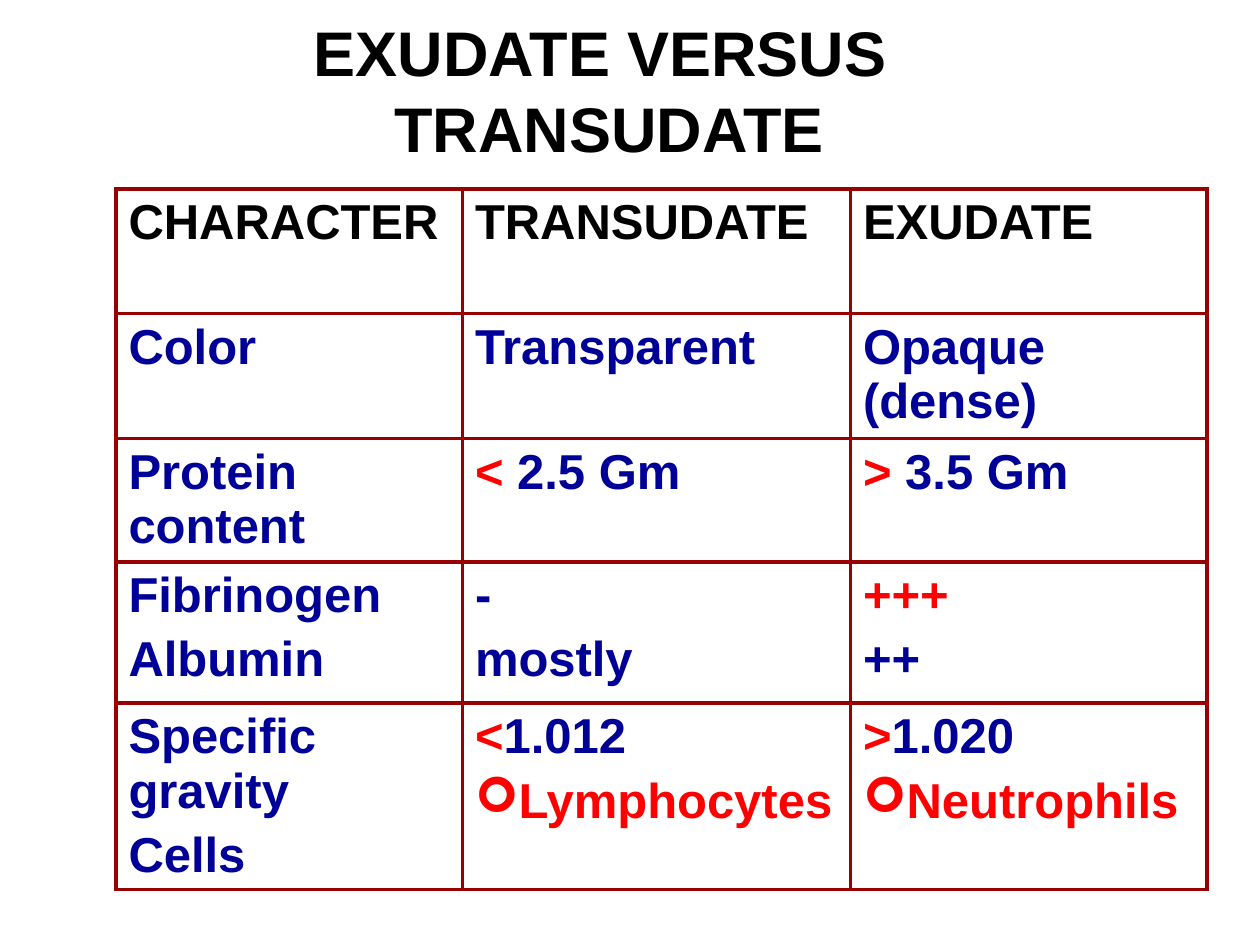
from typing import NamedTuple

from lxml.etree import SubElement
from pptx import Presentation
from pptx.dml.color import RGBColor
from pptx.enum.text import MSO_ANCHOR, MSO_AUTO_SIZE, PP_ALIGN
from pptx.oxml.ns import qn
from pptx.util import Inches, Pt

BLACK = RGBColor(0x00, 0x00, 0x00)
NAVY = RGBColor(0x00, 0x00, 0x99)
RED = RGBColor(0xFF, 0x00, 0x00)
MAROON = RGBColor(0x99, 0x00, 0x00)

COLUMN_WIDTHS = (2.75, 3.08, 2.83)
ROW_HEIGHTS = (0.99, 0.99, 0.98, 1.12, 1.26)
BORDER_WIDTH = Pt(2.25)


class Span(NamedTuple):
    text: str
    color: RGBColor = NAVY


class Line(NamedTuple):
    spans: tuple[Span, ...]
    bullet: str = ""


def plain(text: str, color: RGBColor = NAVY, bullet: str = "") -> Line:
    return Line((Span(text, color),), bullet)


def compared(sign: str, value: str) -> Line:
    return Line((Span(sign, RED), Span(value)))


COMPARISON = (
    tuple((plain(heading, BLACK),) for heading in ("CHARACTER", "TRANSUDATE", "EXUDATE")),
    tuple((plain(entry),) for entry in ("Color", "Transparent", "Opaque (dense)")),
    ((plain("Protein content"),), (compared("<", " 2.5 Gm"),), (compared(">", " 3.5 Gm"),)),
    (
        (plain("Fibrinogen"), plain("Albumin")),
        (plain("-"), plain("mostly")),
        (plain("+++", RED), plain("++")),
    ),
    (
        (plain("Specific gravity"), plain("Cells")),
        (compared("<", "1.012"), plain("Lymphocytes", RED, "➢")),
        (compared(">", "1.020"), plain("Neutrophils", RED, "➢")),
    ),
)


def add_text(paragraph, text: str, *, size: float = 28, color: RGBColor = NAVY) -> None:
    run = paragraph.add_run()
    run.text = text
    run.font.name = "Arial"
    run.font.size = Pt(size)
    run.font.bold = True
    run.font.color.rgb = color


def write_lines(frame, lines: tuple[Line, ...]) -> None:
    for index, line in enumerate(lines):
        paragraph = frame.add_paragraph() if index else frame.paragraphs[0]
        paragraph.alignment = PP_ALIGN.LEFT
        paragraph.space_before = Pt(5.6)
        if line.bullet:
            properties = paragraph._p.get_or_add_pPr()
            SubElement(properties, qn("a:buFont"), typeface="Wingdings")
            SubElement(properties, qn("a:buChar"), char=line.bullet)
        for span in line.spans:
            add_text(paragraph, span.text, color=span.color)


def draw_borders(cell) -> None:
    properties = cell._tc.get_or_add_tcPr()
    for side in ("lnL", "lnR", "lnT", "lnB"):
        border = SubElement(properties, qn(f"a:{side}"), w=str(int(BORDER_WIDTH)))
        fill = SubElement(border, qn("a:solidFill"))
        SubElement(fill, qn("a:srgbClr"), val=str(MAROON))


def add_title(slide) -> None:
    title = slide.shapes.title
    title.left, title.top = Inches(0.5), Inches(0.67)
    title.width, title.height = Inches(8.67), Inches(0.08)
    frame = title.text_frame
    frame.word_wrap = True
    frame.auto_size = MSO_AUTO_SIZE.NONE
    frame.vertical_anchor = MSO_ANCHOR.MIDDLE
    heading = frame.paragraphs[0]
    heading.alignment = PP_ALIGN.CENTER
    add_text(heading, "EXUDATE VERSUS ", size=36, color=BLACK)
    heading.add_line_break()
    add_text(heading, "TRANSUDATE", size=36, color=BLACK)


def add_comparison(slide) -> None:
    table = slide.shapes.add_table(
        len(ROW_HEIGHTS), len(COLUMN_WIDTHS), Inches(0.92), Inches(1.5),
        Inches(sum(COLUMN_WIDTHS)), Inches(sum(ROW_HEIGHTS)),
    ).table
    table.first_row = table.horz_banding = False
    for column, width in zip(table.columns, COLUMN_WIDTHS):
        column.width = Inches(width)
    for row, height, entries in zip(table.rows, ROW_HEIGHTS, COMPARISON):
        row.height = Inches(height)
        for cell, lines in zip(row.cells, entries):
            draw_borders(cell)
            cell.fill.background()
            write_lines(cell.text_frame, lines)


def main() -> None:
    deck = Presentation()
    deck.slide_width, deck.slide_height = Inches(10), Inches(7.5)
    slide = deck.slides.add_slide(deck.slide_layouts[5])
    add_title(slide)
    add_comparison(slide)
    deck.save("out.pptx")


if __name__ == "__main__":
    main()
